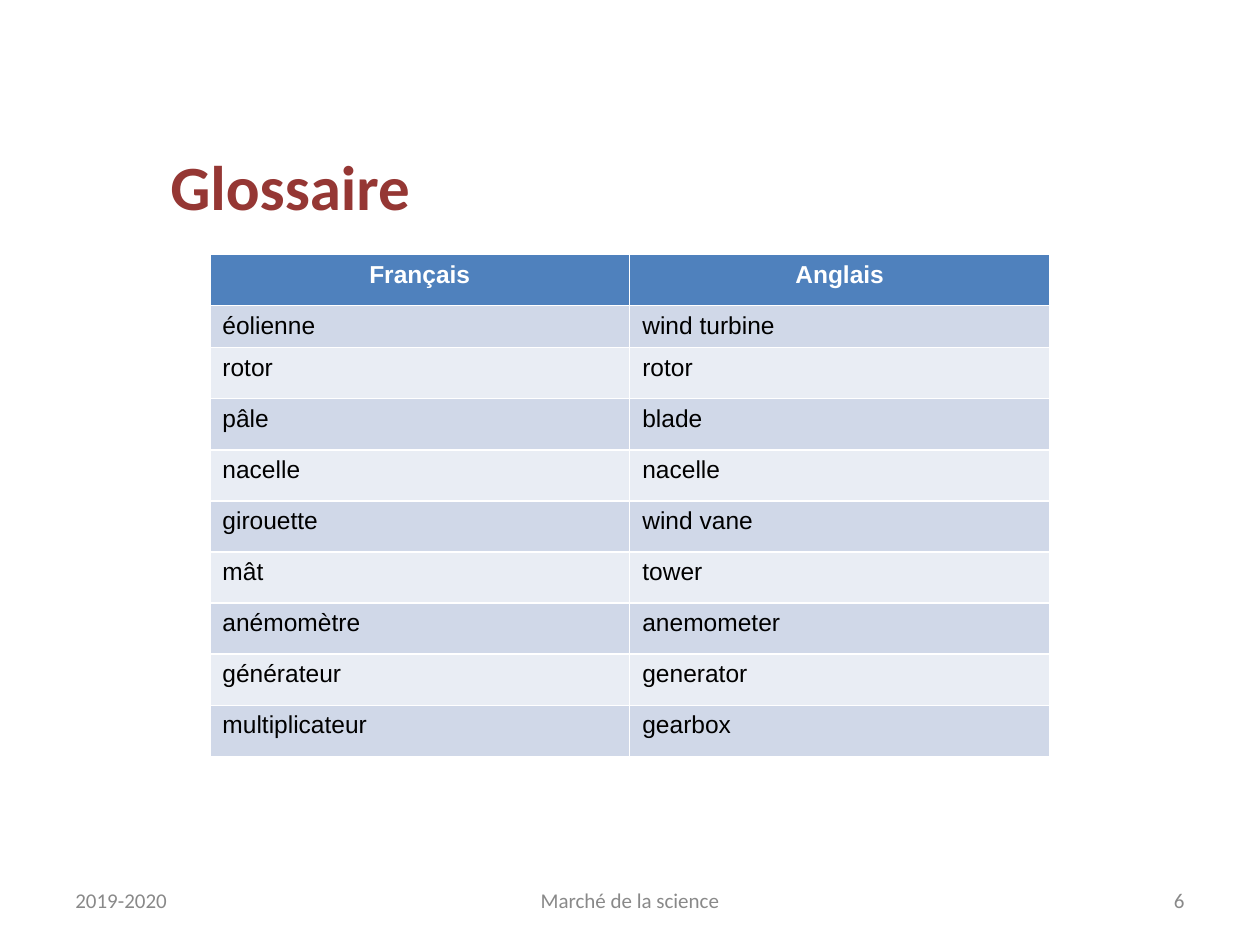
from pptx import Presentation
from pptx.dml.color import RGBColor
from pptx.enum.text import MSO_ANCHOR as Anchor, MSO_AUTO_SIZE as Auto, PP_ALIGN as Align
from pptx.util import Cm, Pt

WHITE = RGBColor(0xFF, 0xFF, 0xFF)
BLACK = RGBColor(0x00, 0x00, 0x00)
GREY = RGBColor(0x89, 0x89, 0x89)
RED = RGBColor(0x95, 0x37, 0x34)
BLUE = RGBColor(0x4F, 0x81, 0xBD)
BANDS = (RGBColor(0xE9, 0xED, 0xF4), RGBColor(0xD0, 0xD8, 0xE8))

WORDS = [
    ("Français", "Anglais"),
    ("éolienne", "wind turbine"),
    ("rotor", "rotor"),
    ("pâle", "blade"),
    ("nacelle", "nacelle"),
    ("girouette", "wind vane"),
    ("mât", "tower"),
    ("anémomètre", "anemometer"),
    ("générateur", "generator"),
    ("multiplicateur", "gearbox"),
]
FOOT = [
    ("2019-2020", 1.27, 5.93, Align.LEFT),
    ("Marché de la science", 8.68, 8.04, Align.CENTER),
    ("6", 18.2, 5.93, Align.RIGHT),
]


def style(para, face, size, color, bold=False, align=Align.LEFT):
    """Set the font and alignment of a paragraph."""
    para.alignment = align
    font = para.font
    font.name, font.size, font.bold = face, Pt(size), bold
    font.color.rgb = color


def add_title(slide, text):
    """Place and format the title."""
    title = slide.shapes.title
    title.left, title.top = Cm(3.18), Cm(2.84)
    title.width, title.height = Cm(20.96), Cm(2.26)
    frame = title.text_frame
    frame.text = text
    frame.auto_size = Auto.NONE
    frame.vertical_anchor = Anchor.TOP
    style(frame.paragraphs[0], "Calibri", 36, RED, True)


def add_foot(slide, text, left, width, align):
    """Add one text of the footer line."""
    box = slide.shapes.add_textbox(Cm(left), Cm(17.65), Cm(width), Cm(1.01))
    frame = box.text_frame
    frame.text = text
    frame.word_wrap = True
    frame.vertical_anchor = Anchor.MIDDLE
    style(frame.paragraphs[0], "Calibri", 12, GREY, align=align)


def fill_cell(cell, text, row):
    """Write a word in a cell and colour it by its row."""
    head = row == 0
    cell.text = text
    cell.fill.solid()
    cell.fill.fore_color.rgb = BLUE if head else BANDS[row % 2]
    style(cell.text_frame.paragraphs[0], "Arial", 14, WHITE if head else BLACK,
          head, Align.CENTER if head else Align.LEFT)


def add_words(slide, words):
    """Add the table of words in both languages."""
    frame = slide.shapes.add_table(len(words), 2, Cm(4.23), Cm(5.13), Cm(16.93), Cm(10.1))
    table = frame.table
    for row, pair in enumerate(words):
        table.rows[row].height = Cm(0.69 if row == 1 else 1.03)
        for col, text in enumerate(pair):
            fill_cell(table.cell(row, col), text, row)


def main():
    """Build the slide and save it."""
    deck = Presentation()
    deck.slide_width, deck.slide_height = Cm(25.4), Cm(19.05)
    slide = deck.slides.add_slide(deck.slide_layouts[5])
    for item in FOOT:
        add_foot(slide, *item)
    add_title(slide, "Glossaire")
    add_words(slide, WORDS)
    deck.save("out.pptx")


if __name__ == "__main__":
    main()
